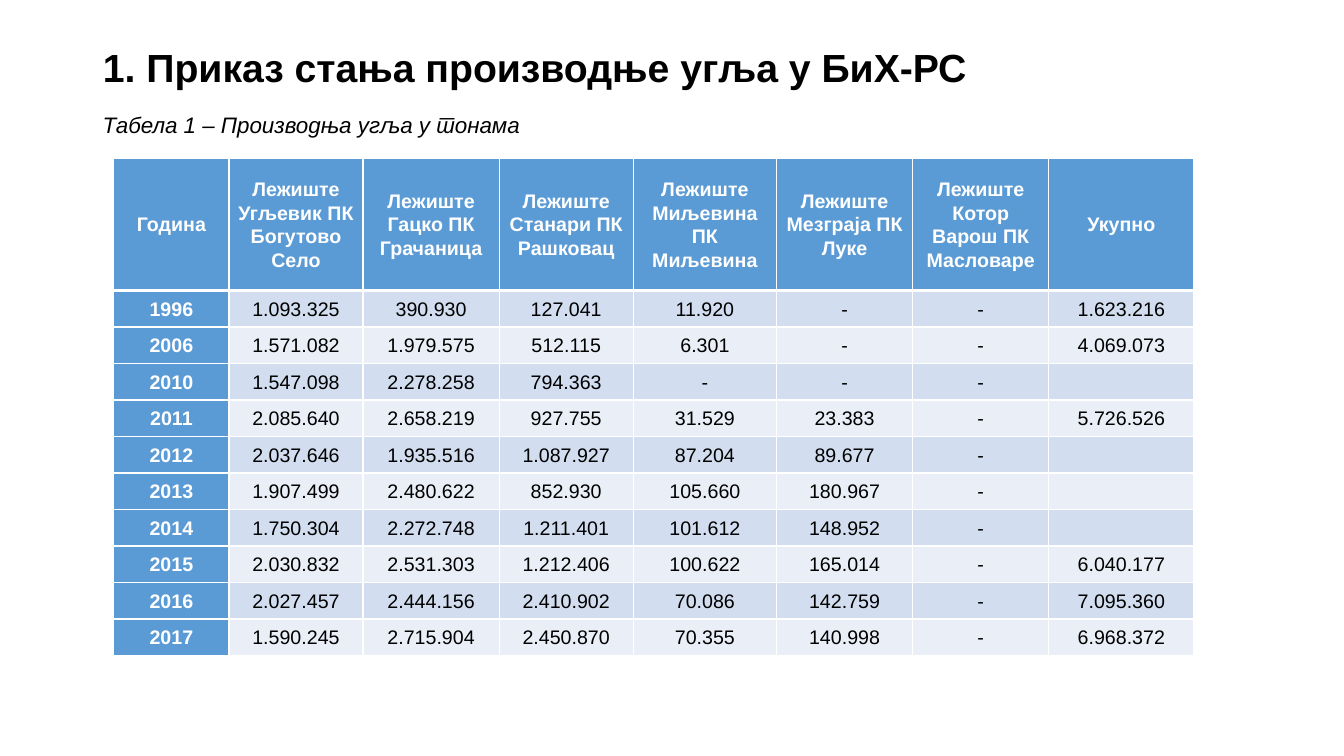
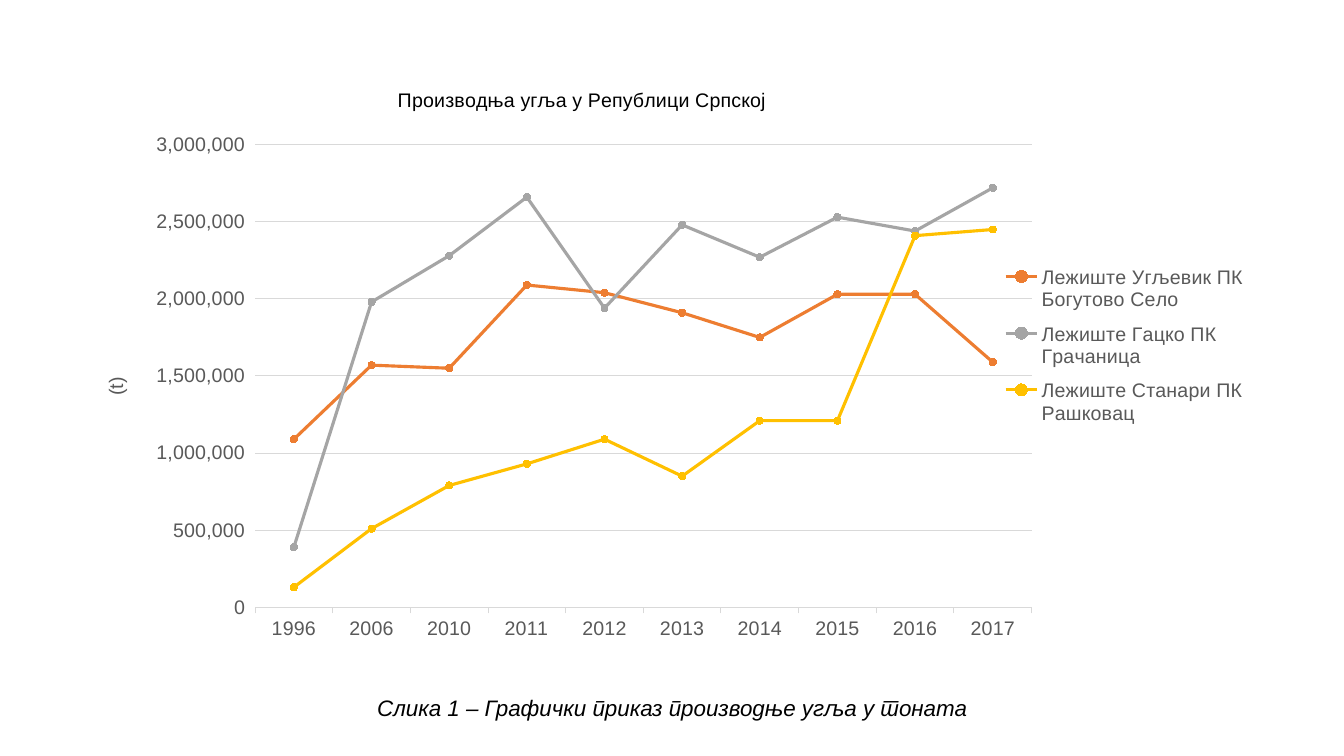
import dataclasses

import pptx
import pptx.chart.data
import pptx.dml.color
import pptx.enum.chart
import pptx.enum.lang
import pptx.enum.text
import pptx.oxml
import pptx.oxml.ns
import pptx.util

Cm = pptx.util.Cm
Pt = pptx.util.Pt
ALIGN = pptx.enum.text.PP_ALIGN
TICK = pptx.enum.chart.XL_TICK_MARK


@dataclasses.dataclass(frozen=True)
class Theme:
    font: str = "Arial"
    text: str = "000000"
    white: str = "FFFFFF"
    header: str = "5B9BD5"
    bands: tuple = ("D2DEEF", "EAEFF7")
    axis_text: str = "595959"
    grid: str = "D9D9D9"
    series: tuple = ("ED7D31", "A5A5A5", "FFC000")
    title_size: int = 28
    caption_size: int = 16
    body_size: int = 14


THEME = Theme()

LEFT, WIDTH = 2.34, 29.21
COLUMN_WIDTHS = (2.9, 3.38, 3.43, 3.38, 3.61, 3.43, 3.43, 3.66)
HEADER_HEIGHT, ROW_HEIGHT = 3.33, 0.92

HEADERS = (
    "Година",
    "Лежиште Угљевик ПК Богутово Село",
    "Лежиште Гацко ПК Грачаница",
    "Лежиште Станари ПК Рашковац",
    "Лежиште Миљевина ПК Миљевина",
    "Лежиште Мезграја ПК Луке",
    "Лежиште Котор Варош ПК Масловаре",
    "Укупно",
)
PRODUCTION = (
    ("1996", "1.093.325", "390.930", "127.041", "11.920", "-", "-", "1.623.216"),
    ("2006", "1.571.082", "1.979.575", "512.115", "6.301", "-", "-", "4.069.073"),
    ("2010", "1.547.098", "2.278.258", "794.363", "-", "-", "-", ""),
    ("2011", "2.085.640", "2.658.219", "927.755", "31.529", "23.383", "-", "5.726.526"),
    ("2012", "2.037.646", "1.935.516", "1.087.927", "87.204", "89.677", "-", ""),
    ("2013", "1.907.499", "2.480.622", "852.930", "105.660", "180.967", "-", ""),
    ("2014", "1.750.304", "2.272.748", "1.211.401", "101.612", "148.952", "-", ""),
    ("2015", "2.030.832", "2.531.303", "1.212.406", "100.622", "165.014", "-", "6.040.177"),
    ("2016", "2.027.457", "2.444.156", "2.410.902", "70.086", "142.759", "-", "7.095.360"),
    ("2017", "1.590.245", "2.715.904", "2.450.870", "70.355", "140.998", "-", "6.968.372"),
)
CHARTED_COLUMNS = (1, 2, 3)


def rgb(color):
    return pptx.dml.color.RGBColor.from_string(color)


def style_font(font, size, color, bold=False, italic=False):
    font.name = THEME.font
    font.size = Pt(size)
    font.color.rgb = rgb(color)
    font.bold = bold
    font.italic = italic


def write(tf, text, size, color=THEME.text, align=ALIGN.LEFT, spacing=0.9, **style):
    p = tf.paragraphs[0]
    p.alignment = align
    p.line_spacing = spacing
    r = p.add_run()
    r.text = text
    r.font.language_id = pptx.enum.lang.MSO_LANGUAGE_ID.SERBIAN_CYRILLIC
    style_font(r.font, size, color, **style)


def fill_text_box(sp, top, height, text, size, **style):
    """Place a title or text box across the content width and write its line."""
    sp.left, sp.top, sp.width, sp.height = Cm(LEFT), Cm(top), Cm(WIDTH), Cm(height)
    tf = sp.text_frame
    tf.word_wrap = True
    tf.auto_size = pptx.enum.text.MSO_AUTO_SIZE.NONE
    tf.vertical_anchor = pptx.enum.text.MSO_ANCHOR.MIDDLE
    write(tf, text, size, **style)


def add_borders(cell, bottom):
    tc_pr = cell._tc.get_or_add_tcPr()
    for side, width in (("L", 1), ("R", 1), ("T", 1), ("B", bottom)):
        tc_pr.append(pptx.oxml.parse_xml(
            f'<a:ln{side} {pptx.oxml.ns.nsdecls("a")} w="{Pt(width)}">'
            f'<a:solidFill><a:srgbClr val="{THEME.white}"/></a:solidFill></a:ln{side}>'
        ))


def fill_cell(cell, text, row, column):
    heading = row == 0 or column == 0
    add_borders(cell, bottom=3 if row == 0 else 1)
    cell.fill.solid()
    cell.fill.fore_color.rgb = rgb(THEME.header if heading else THEME.bands[(row - 1) % 2])
    cell.vertical_anchor = pptx.enum.text.MSO_ANCHOR.MIDDLE
    cell.margin_left = cell.margin_right = Cm(0.18)
    cell.margin_top = cell.margin_bottom = 0
    if text:
        write(cell.text_frame, text, THEME.body_size,
              THEME.white if heading else THEME.text,
              align=ALIGN.CENTER, spacing=1.07, bold=heading)


def add_production_table(s, left, top):
    rows = (HEADERS, *PRODUCTION)
    heights = [HEADER_HEIGHT] + [ROW_HEIGHT] * len(PRODUCTION)
    table = s.shapes.add_table(len(rows), len(HEADERS), Cm(left), Cm(top),
                               Cm(sum(COLUMN_WIDTHS)), Cm(sum(heights))).table
    table.first_col = True
    for column, width in zip(table.columns, COLUMN_WIDTHS):
        column.width = Cm(width)
    for i, (values, height) in enumerate(zip(rows, heights)):
        table.rows[i].height = Cm(height)
        for j, text in enumerate(values):
            fill_cell(table.cell(i, j), text, i, j)


def rounded_tonnes(text):
    return round(int(text.replace(".", "")), -4)


def set_layout(element, x, y, w=None, h=None, inner=False):
    """Give a chart part a fixed place, as fractions of the chart area."""
    for old in element.findall(pptx.oxml.ns.qn("c:layout")):
        element.remove(old)
    values = [("layoutTarget", "inner")] if inner else []
    values += [("xMode", "edge"), ("yMode", "edge"), ("x", x), ("y", y)]
    values += [(name, v) for name, v in (("w", w), ("h", h)) if v is not None]
    body = "".join(f'<c:{name} val="{v}"/>' for name, v in values)
    layout = pptx.oxml.parse_xml(
        f'<c:layout {pptx.oxml.ns.nsdecls("c")}><c:manualLayout>{body}'
        "</c:manualLayout></c:layout>"
    )
    before = [c for c in element
              if c.tag in map(pptx.oxml.ns.qn, ("c:tx", "c:legendPos", "c:legendEntry"))]
    element.insert(len(before), layout)


def style_axes(chart):
    for axis in (chart.category_axis, chart.value_axis):
        axis.major_tick_mark = TICK.OUTSIDE
        axis.minor_tick_mark = TICK.NONE
        style_font(axis.tick_labels.font, THEME.body_size, THEME.axis_text)
    line = chart.category_axis.format.line
    line.color.rgb, line.width = rgb(THEME.grid), Pt(0.75)

    axis = chart.value_axis
    axis.minimum_scale, axis.maximum_scale, axis.major_unit = 0, 3000000, 500000
    axis.format.line.fill.background()
    axis.has_major_gridlines = True
    line = axis.major_gridlines.format.line
    line.color.rgb, line.width = rgb(THEME.grid), Pt(0.75)
    axis.tick_labels.number_format = "#,##0"
    axis.tick_labels.number_format_is_linked = False
    write(axis.axis_title.text_frame, "(t)", THEME.body_size, THEME.axis_text,
          align=ALIGN.CENTER)


def style_series(series, color):
    series.smooth = False
    series.format.line.color.rgb = rgb(color)
    series.format.line.width = Pt(2.25)
    marker = series.marker
    marker.style = pptx.enum.chart.XL_MARKER_STYLE.CIRCLE
    marker.size = 5
    marker.format.fill.solid()
    marker.format.fill.fore_color.rgb = rgb(color)
    marker.format.line.color.rgb = rgb(color)


def add_production_chart(s, top, height):
    data = pptx.chart.data.CategoryChartData(number_format="#,##0")
    data.categories = [row[0] for row in PRODUCTION]
    for column in CHARTED_COLUMNS:
        data.add_series(HEADERS[column], [rounded_tonnes(row[column]) for row in PRODUCTION])
    chart = s.shapes.add_chart(pptx.enum.chart.XL_CHART_TYPE.LINE_MARKERS, Cm(LEFT), Cm(top),
                               Cm(WIDTH), Cm(height), data).chart
    style_font(chart.font, THEME.body_size, THEME.text)
    chart.has_title = True
    write(chart.chart_title.text_frame, "Производња угља у Републици Српској",
          THEME.body_size, align=ALIGN.CENTER)
    set_layout(chart.chart_title._element, 0.26, 0.04)

    plot = chart.plots[0]
    plot.vary_by_categories = False
    for series, color in zip(plot.series, THEME.series):
        style_series(series, color)
    style_axes(chart)
    set_layout(chart._chartSpace.chart.plotArea, 0.14, 0.14, 0.67, 0.76, inner=True)

    chart.has_legend = True
    legend = chart.legend
    legend.position = pptx.enum.chart.XL_LEGEND_POSITION.RIGHT
    legend.include_in_layout = False
    style_font(legend.font, THEME.body_size, THEME.axis_text)
    set_layout(legend._element, 0.78, 0.32, 0.22, 0.3)


def build_table_slide(prs):
    s = prs.slides.add_slide(prs.slide_layouts[5])
    fill_text_box(s.shapes.title, 0.94, 1.63, "1. Приказ стања производње угља у БиХ-РС",
                  THEME.title_size, bold=True)
    add_production_table(s, 2.87, 3.99)
    fill_text_box(s.shapes.add_textbox(0, 0, 0, 0), 2.36, 1.63,
                  "Табела 1 – Производња угља у тонама", THEME.caption_size, italic=True)


def build_chart_slide(prs):
    s = prs.slides.add_slide(prs.slide_layouts[5])
    fill_text_box(s.shapes.title, 17.17, 1.42,
                  "Слика 1 – Графички приказ производње угља у тонаma",
                  THEME.caption_size, align=ALIGN.CENTER, italic=True)
    add_production_chart(s, 1.5, 15.34)


def main():
    prs = pptx.Presentation()
    prs.slide_width, prs.slide_height = Cm(33.87), Cm(19.05)
    build_table_slide(prs)
    build_chart_slide(prs)
    prs.save("out.pptx")


if __name__ == "__main__":
    main()
